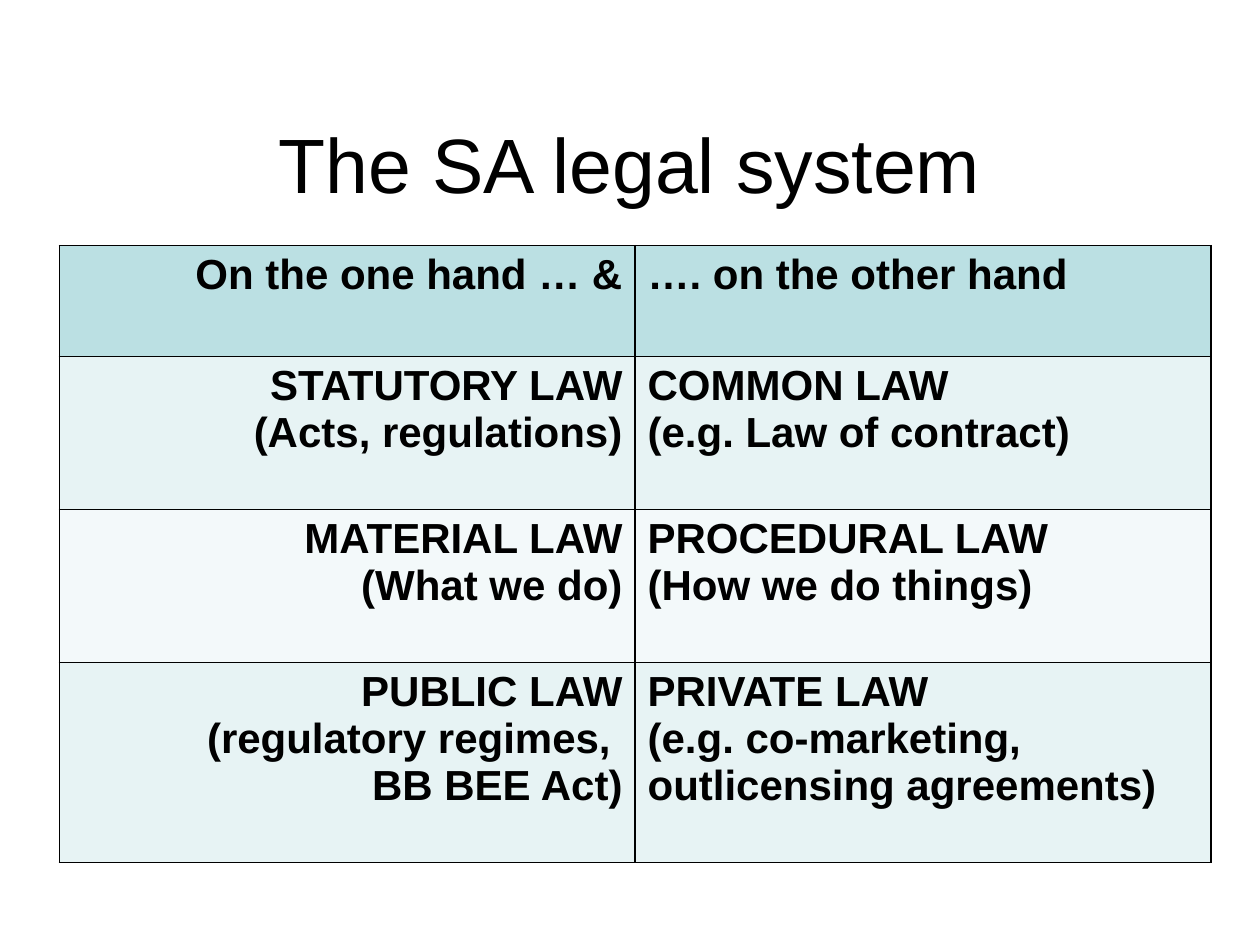
import pptx
import pptx.dml.color
import pptx.enum.text
import pptx.oxml
import pptx.oxml.ns
import pptx.util

Pt = pptx.util.Pt
RGB = pptx.dml.color.RGBColor.from_string
ALIGN = pptx.enum.text.PP_ALIGN

TITLE = "The SA legal system"
ROWS = [
    ("On the one hand … &", "…. on the other hand"),
    ("STATUTORY LAW\n(Acts, regulations)",
     "COMMON LAW\n(e.g. Law of contract)"),
    ("MATERIAL LAW\n(What we do)",
     "PROCEDURAL LAW\n(How we do things)"),
    ("PUBLIC LAW\n(regulatory regimes, \nBB BEE Act)",
     "PRIVATE LAW\n(e.g. co-marketing, outlicensing agreements)"),
]
HEIGHTS = [63.4, 87.4, 87.4, 114.4]
SIDES = [ALIGN.RIGHT, ALIGN.LEFT]
THEME = {
    "font": "Arial", "ink": "000000", "title": 44, "cell": 24, "line": 1,
    "head": "BBE0E3", "bands": ["E7F3F4", "F3F9FA"],
}
LEFT, TOP, WIDTH = 33.9, 140.4, 658


def style(para, size, align, bold=False):
    para.alignment = align
    for run in para.runs:
        font = run.font
        font.name = THEME["font"]
        font.size = Pt(size)
        font.bold = bold
        font.color.rgb = RGB(THEME["ink"])


def border(cell):
    props = cell._tc.get_or_add_tcPr()
    space = pptx.oxml.ns.nsdecls("a")
    for spot, tag in enumerate(("lnL", "lnR", "lnT", "lnB")):
        props.insert(spot, pptx.oxml.parse_xml(
            f'<a:{tag} {space} w="{Pt(THEME["line"])}"><a:solidFill>'
            f'<a:srgbClr val="{THEME["ink"]}"/></a:solidFill></a:{tag}>'))


def add_title(slide):
    title = slide.shapes.title
    title.left, title.top = Pt(54), Pt(48)
    title.width, title.height = Pt(612), Pt(90)
    frame = title.text_frame
    frame.text = TITLE
    frame.vertical_anchor = pptx.enum.text.MSO_ANCHOR.MIDDLE
    style(frame.paragraphs[0], THEME["title"], ALIGN.CENTER)


def add_grid(slide):
    table = slide.shapes.add_table(
        len(ROWS), len(SIDES), Pt(LEFT), Pt(TOP), Pt(WIDTH),
        Pt(sum(HEIGHTS))).table
    for col in table.columns:
        col.width = Pt(WIDTH / len(SIDES))
    for i, (texts, height) in enumerate(zip(ROWS, HEIGHTS)):
        table.rows[i].height = Pt(height)
        fill = THEME["bands"][(i - 1) % 2] if i else THEME["head"]
        for j, (text, side) in enumerate(zip(texts, SIDES)):
            cell = table.cell(i, j)
            cell.text_frame.text = text
            cell.fill.solid()
            cell.fill.fore_color.rgb = RGB(fill)
            border(cell)
            for para in cell.text_frame.paragraphs:
                style(para, THEME["cell"], side, bold=True)


def main():
    deck = pptx.Presentation()
    deck.slide_width, deck.slide_height = Pt(720), Pt(540)
    slide = deck.slides.add_slide(deck.slide_layouts.get_by_name("Title Only"))
    add_title(slide)
    add_grid(slide)
    deck.save("out.pptx")


if __name__ == "__main__":
    main()
